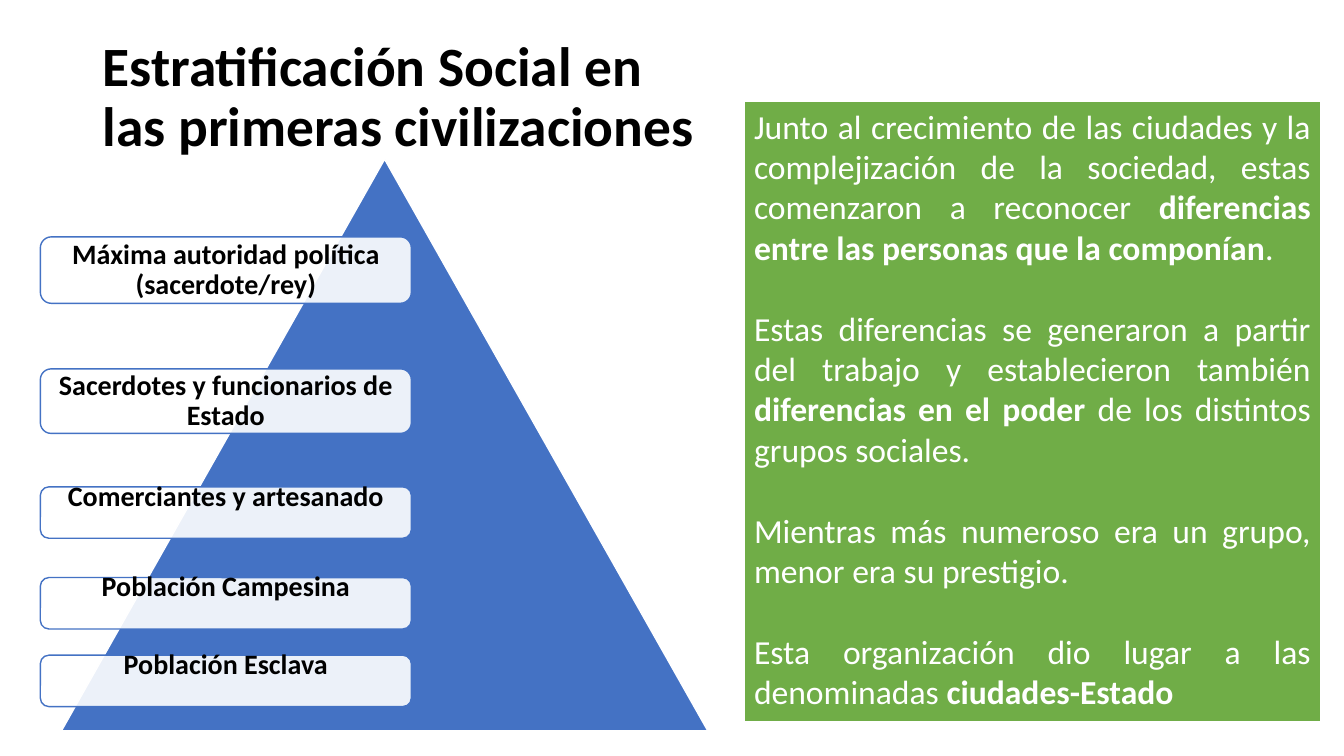
from dataclasses import dataclass

from lxml import etree
from pptx import Presentation
from pptx.dml.color import RGBColor
from pptx.enum.shapes import MSO_SHAPE as SHAPE
from pptx.enum.text import MSO_ANCHOR as ANCHOR, MSO_AUTO_SIZE as AUTO, PP_ALIGN as ALIGN
from pptx.oxml.ns import qn
from pptx.util import Inches, Pt


@dataclass(frozen=True)
class Theme:
    font: str = "Calibri"
    black: RGBColor = RGBColor(0x00, 0x00, 0x00)
    white: RGBColor = RGBColor(0xFF, 0xFF, 0xFF)
    blue: RGBColor = RGBColor(0x44, 0x72, 0xC4)
    green: RGBColor = RGBColor(0x70, 0xAD, 0x47)
    title: float = 39.6
    label: float = 20
    body: float = 24


T = Theme()


def add_box(kind, at, fill, line, width):
    sp = s.shapes.add_shape(kind, *[Inches(v) for v in at])
    sp.shadow.inherit = False
    sp.fill.solid()
    sp.fill.fore_color.rgb = fill
    sp.line.color.rgb = line
    sp.line.width = Pt(width)
    sp.text_frame.word_wrap = True
    return sp


def style_run(r, size, color, bold):
    r.font.name = T.font
    r.font.size = Pt(size)
    r.font.color.rgb = color
    r.font.bold = bold


prs = Presentation()
prs.slide_width, prs.slide_height = Inches(13.33), Inches(7.5)
s = prs.slides.add_slide(prs.slide_layouts[5])

# Title
title = s.shapes.title
title.left, title.top, title.width, title.height = [Inches(v) for v in (0.92, 0.25, 6.29, 1.45)]
tf = title.text_frame
tf.text = "Estratificación Social en las primeras civilizaciones"
tf.word_wrap = True
tf.auto_size = AUTO.NONE
tf.vertical_anchor = ANCHOR.MIDDLE
tf.margin_right = Inches(0.15)
p = tf.paragraphs[0]
p.alignment = ALIGN.LEFT
p.line_spacing = 0.9
style_run(p.runs[0], T.title, T.black, True)

# Social pyramid: top, height and bottom inset of each label
add_box(SHAPE.ISOSCELES_TRIANGLE, (0.61, 1.58, 6.41, 5.67), T.blue, T.white, 1)
strata = [
    ("Máxima autoridad política (sacerdote/rey)", 2.35, 0.66, 0),
    ("Sacerdotes y funcionarios de Estado", 3.66, 0.64, 0),
    ("Comerciantes y artesanado", 4.83, 0.51, 0.31),
    ("Población Campesina", 5.73, 0.51, 0.31),
    ("Población Esclava", 6.5, 0.51, 0.31),
]
for text, top, height, bottom_inset in strata:
    sp = add_box(SHAPE.ROUNDED_RECTANGLE, (0.4, top, 3.68, height), T.white, T.blue, 1)
    color = sp.fill._xPr.find(qn("a:solidFill"))[0]
    etree.SubElement(color, qn("a:alpha")).set("val", "90000")
    tf = sp.text_frame
    tf.text = text
    tf.vertical_anchor = ANCHOR.MIDDLE
    tf.margin_top, tf.margin_bottom = 0, Inches(bottom_inset)
    p = tf.paragraphs[0]
    p.alignment = ALIGN.CENTER
    p.line_spacing = 0.9
    style_run(p.runs[0], T.label, T.black, True)

# Explanation: each paragraph alternates plain and bold text
explanation = [
    ["Junto al crecimiento de las ciudades y la complejización de la sociedad, "
     "estas comenzaron a reconocer ",
     "diferencias entre las personas que la componían", "."],
    ["Estas diferencias se generaron a partir del trabajo y establecieron también ",
     "diferencias en el poder ", "de los distintos grupos sociales."],
    ["Mientras más numeroso era un grupo, menor era su prestigio."],
    ["Esta organización dio lugar a las denominadas ", "ciudades-Estado"],
]
panel = add_box(SHAPE.RECTANGLE, (7.38, 1, 5.72, 6.16), T.green, T.white, 1.5)
tf = panel.text_frame
tf.vertical_anchor = ANCHOR.TOP
for i, parts in enumerate(explanation):
    p = tf.add_paragraph() if i else tf.paragraphs[0]
    p.alignment = ALIGN.JUSTIFY
    p.space_before = Pt(29 if i else 0)
    for j, part in enumerate(parts):
        r = p.add_run()
        r.text = part
        style_run(r, T.body, T.white, j % 2 == 1)

prs.save("out.pptx")
